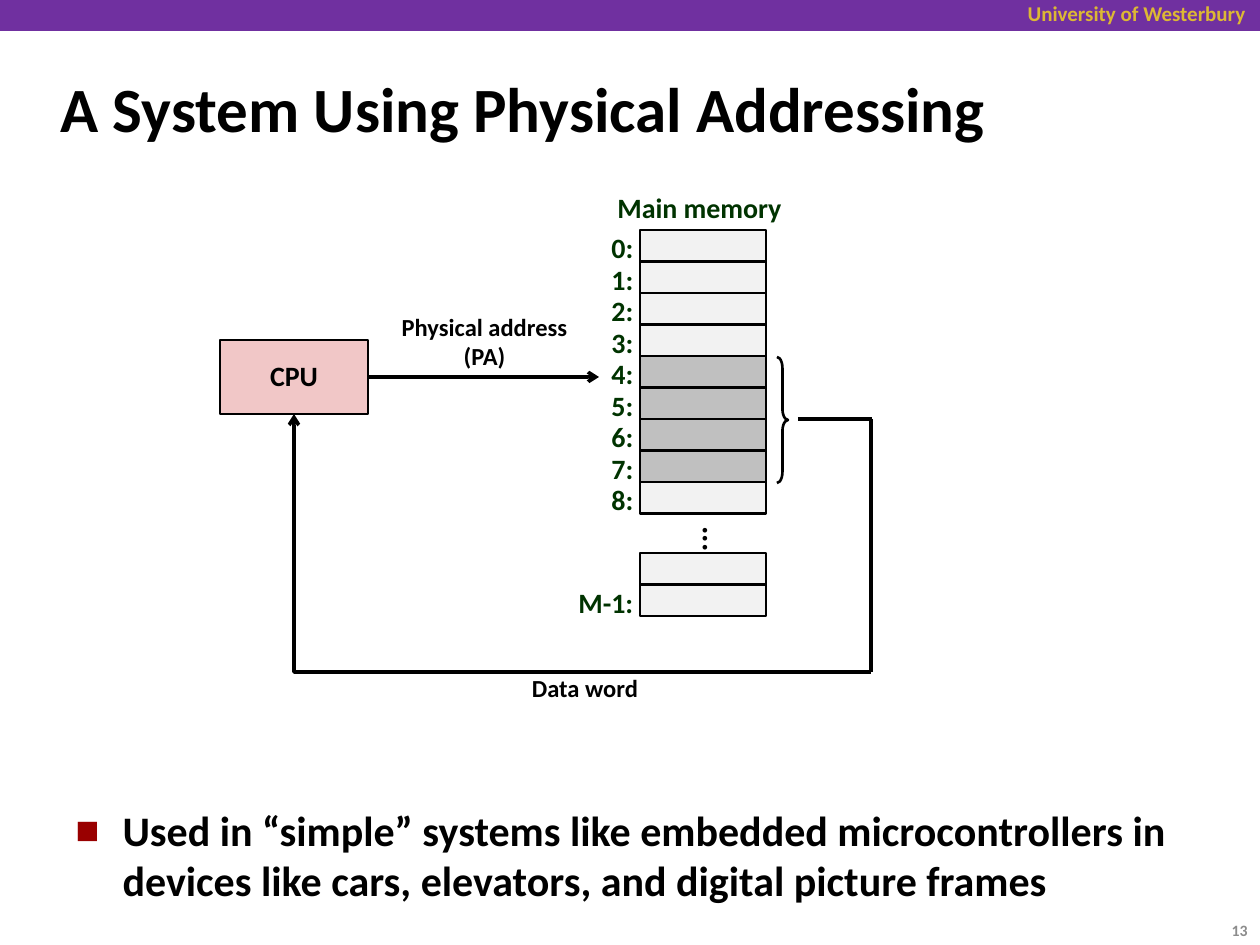
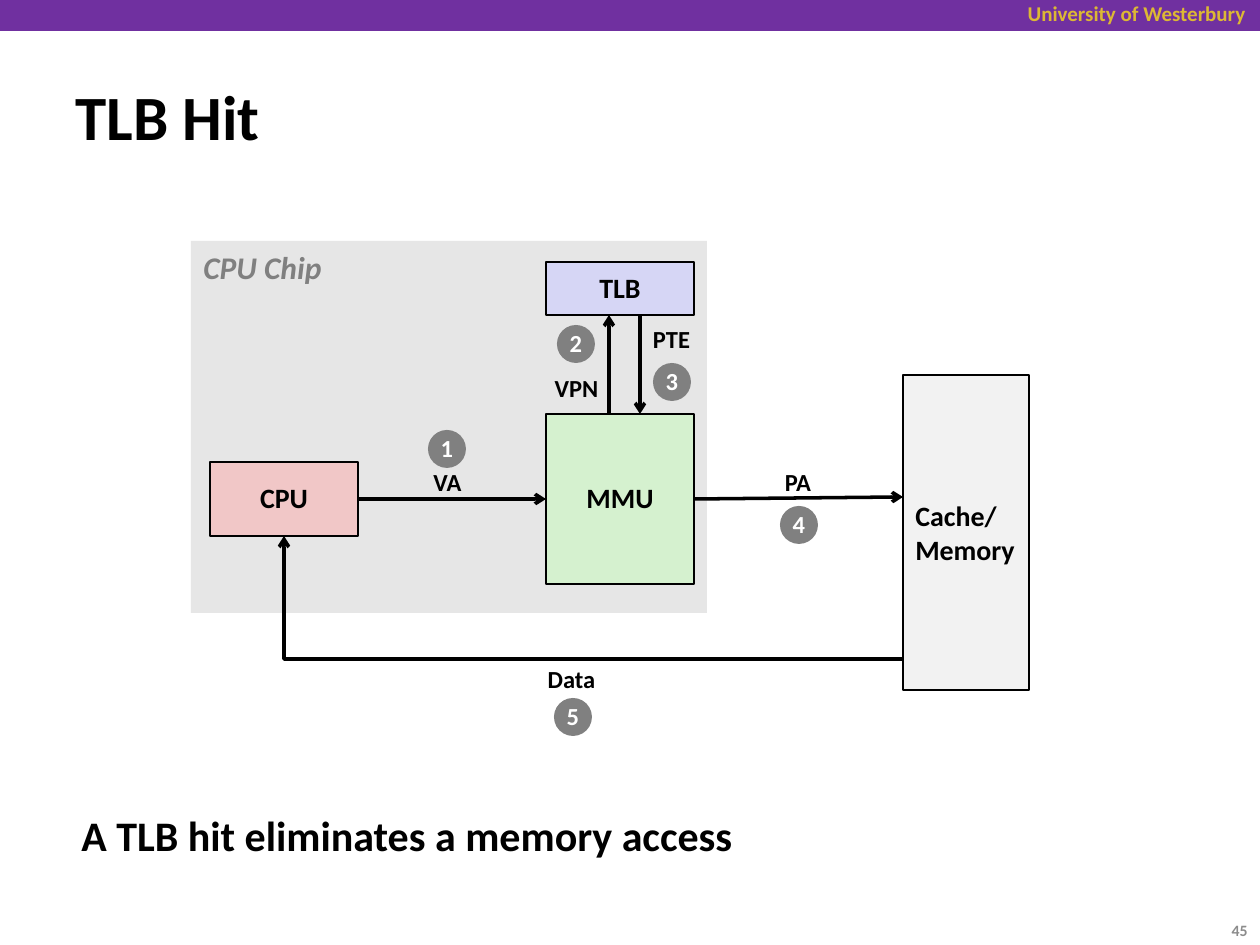
import pptx
import pptx.util
import pptx.dml.color
import pptx.enum.shapes
import pptx.enum.text
import pptx.oxml.ns
import lxml.etree

SHAPE = pptx.enum.shapes.MSO_SHAPE
CONNECTOR = pptx.enum.shapes.MSO_CONNECTOR
ALIGN = pptx.enum.text.PP_ALIGN
ANCHOR = pptx.enum.text.MSO_ANCHOR
FIT = pptx.enum.text.MSO_AUTO_SIZE
qn = pptx.oxml.ns.qn

FONT = "Calibri"
COLORS = {
    "band": "7030A0", "school": "DCB834", "ink": "000000", "white": "FFFFFF",
    "bullet": "990000", "memory_text": "003300", "cell": "F2F2F2", "word": "C0C0C0",
    "cpu": "F1C7C7", "mmu": "D5F1CF", "tlb": "D6D6F5", "chip": "E6E6E6",
    "gray": "808080", "page": "8C8C8C",
}
SCHOOL = "University of Westerbury"
PHYSICAL = {
    "title": "A System Using Physical Addressing",
    "note": "Used in “simple” systems like embedded microcontrollers in devices like cars, elevators, and digital picture frames",
    "page": "13",
}
HIT = {"title": "TLB Hit", "note": "A TLB hit eliminates a memory access", "page": "45"}

CELL_LEFT, CELL_WIDTH, TWO_CELLS = 640, 126, 63
LABEL_RIGHT = 646
MEMORY_BLOCKS = [
    (230, [f"{address}:" for address in range(9)]),
    (553, ["", "M-1:"]),
]
WORD_CELLS = {"4:", "5:", "6:", "7:"}
LABEL_WIDTHS = {"M-1:": 80}

HIT_BOXES = {
    "CPU": ("cpu", (210, 462, 148, 74)),
    "MMU": ("mmu", (546, 414, 148, 170)),
    "TLB": ("tlb", (546, 262, 148, 53)),
}
HIT_LABELS = [
    ("VA", (421, 462, 53, 42)),
    ("VPN", (542, 368, 69, 42)),
    ("PTE", (640, 319, 63, 42)),
    ("PA", (772, 462, 52, 42)),
    ("Data", (535, 659, 73, 42)),
]
STEP_SIZE = 38
STEPS = [(428, 430), (557, 325), (653, 363), (780, 506), (554, 698)]


def px(length):
    return round(length * 914400 / 126)


def place(shape, box):
    shape.left, shape.top, shape.width, shape.height = map(px, box)


def rgb(name):
    return pptx.dml.color.RGBColor.from_string(COLORS[name])


def write(shape, text, size=14, color="ink", bold=True, italic=False, align=ALIGN.CENTER,
          anchor=ANCHOR.MIDDLE, spacing=0.98, before=0, wrap=False, fit=FIT.NONE):
    frame = shape.text_frame
    frame.word_wrap, frame.auto_size, frame.vertical_anchor = wrap, fit, anchor
    frame.text = text
    for paragraph in frame.paragraphs:
        paragraph.alignment = align
        paragraph.line_spacing = spacing
        paragraph.space_before = pptx.util.Pt(before)
        for run in paragraph.runs:
            font = run.font
            font.name, font.size, font.bold, font.italic = FONT, pptx.util.Pt(size), bold, italic
            font.color.rgb = rgb(color)
    return shape


def add_text(slide, text, box, **style):
    return write(slide.shapes.add_textbox(*map(px, box)), text, **style)


def add_label(slide, text, box, **style):
    return add_text(slide, text, box, fit=FIT.SHAPE_TO_FIT_TEXT, **style)


def add_box(slide, box, fill=None, line=0, kind=SHAPE.RECTANGLE):
    shape = slide.shapes.add_shape(kind, *map(px, box))
    shape.shadow.inherit = False
    if fill:
        shape.fill.solid()
        shape.fill.fore_color.rgb = rgb(fill)
    else:
        shape.fill.background()
    if line:
        shape.line.color.rgb = rgb("ink")
        shape.line.width = pptx.util.Pt(line)
    else:
        shape.line.fill.background()
    return shape


def add_line(slide, start, end, arrow=True, kind=CONNECTOR.STRAIGHT, begin_at=None, end_at=None):
    line = slide.shapes.add_connector(kind, *map(px, start + end))
    if begin_at:
        line.begin_connect(*begin_at)
    if end_at:
        line.end_connect(*end_at)
    line.line.color.rgb = rgb("ink")
    line.line.width = pptx.util.Pt(2)
    properties = line.element.spPr
    if arrow:
        lxml.etree.SubElement(properties.find(qn("a:ln")), qn("a:tailEnd"), type="arrow")
    lxml.etree.SubElement(properties, qn("a:effectLst"))
    return line


def add_return_path(slide, start, end, cpu):
    path = add_line(slide, start, end, kind=CONNECTOR.ELBOW, end_at=(cpu, 2))
    properties = path.element.spPr
    properties.find(qn("a:prstGeom")).set("prst", "bentConnector2")
    turn = properties.find(qn("a:xfrm"))
    for flip in ("flipH", "flipV"):
        turn.attrib.pop(flip, None)
    turn.set("rot", "10800000")


def add_bullet(paragraph):
    properties = paragraph._p.get_or_add_pPr()
    properties.set("marL", str(px(47)))
    properties.set("indent", str(-px(47)))
    color = lxml.etree.SubElement(properties, qn("a:buClr"))
    lxml.etree.SubElement(color, qn("a:srgbClr"), val=COLORS["bullet"])
    lxml.etree.SubElement(properties, qn("a:buSzPct"), val="60000")
    lxml.etree.SubElement(properties, qn("a:buFont"), typeface=FONT)
    lxml.etree.SubElement(properties, qn("a:buChar"), char="■")


def start_slide(deck, layout, content, title_box):
    slide = deck.slides.add_slide(deck.slide_layouts[layout])
    place(slide.shapes.title, title_box)
    write(slide.shapes.title, content["title"], size=36, align=ALIGN.LEFT, spacing=1.0, wrap=True)
    add_text(slide, content["page"], (1176, 905, 84, 50), size=9, color="page",
             align=ALIGN.RIGHT, spacing=1.0, wrap=True)
    return slide


def move_band_to_master(deck, slide):
    band = add_box(slide, (0, 0, 1260, 31), fill="band")
    school = add_text(slide, SCHOOL, (924, -6, 334, 38), size=12, color="school",
                      align=ALIGN.RIGHT, anchor=ANCHOR.TOP, spacing=1.0, wrap=True)
    for part in (band, school):
        deck.slide_master.element.cSld.spTree.append(part.element)


def add_memory(slide):
    style = dict(size=16, color="memory_text", anchor=ANCHOR.TOP, spacing=0.88, before=6)
    add_label(slide, "Main memory", (604, 189, 191, 42), **style)
    for top, addresses in MEMORY_BLOCKS:
        for row, address in enumerate(addresses):
            y = top + row * TWO_CELLS / 2
            fill = "word" if address in WORD_CELLS else "cell"
            add_box(slide, (CELL_LEFT, y, CELL_WIDTH, TWO_CELLS / 2), fill=fill, line=1.5)
            if address:
                width = LABEL_WIDTHS.get(address, 47)
                add_label(slide, address, (LABEL_RIGHT - width, y - 1, width, 42),
                          align=ALIGN.LEFT, **style)
    dots = add_text(slide, "...", (651, 514, 126, 32), size=18)
    dots.element.txBody.bodyPr.set("vert", "eaVert")


def build_physical(deck):
    slide = start_slide(deck, 1, PHYSICAL, (48, 53, 1201, 108))
    move_band_to_master(deck, slide)
    note = slide.placeholders[1]
    place(note, (63, 798, 1145, 121))
    write(note, PHYSICAL["note"], size=24, align=ALIGN.LEFT, anchor=ANCHOR.TOP,
          spacing=1.0, before=5, wrap=True)
    add_bullet(note.text_frame.paragraphs[0])

    add_memory(slide)
    cpu = write(add_box(slide, (220, 340, 148, 74), fill="cpu", line=1), "CPU", size=16)
    add_label(slide, "Physical address\n(PA)", (388, 306, 193, 72))
    add_label(slide, "Data word", (519, 668, 132, 42))
    brace = add_box(slide, (777, 357, 11, 126), line=1.5, kind=SHAPE.RIGHT_BRACE)
    brace.adjustments[0], brace.adjustments[1] = 1, 0.5
    add_line(slide, (368, 377), (599, 377), begin_at=(cpu, 3))
    add_line(slide, (798, 419), (872, 419), arrow=False)
    add_line(slide, (871, 419), (871, 672), arrow=False)
    add_return_path(slide, (871, 672), (294, 414), cpu)


def build_hit(deck):
    slide = start_slide(deck, 5, HIT, (63, 61, 1201, 108))
    add_box(slide, (191, 241, 516, 372), fill="chip")
    add_label(slide, "CPU Chip", (191, 242, 146, 50), size=18, color="gray", italic=True,
              align=ALIGN.LEFT, anchor=ANCHOR.TOP, spacing=1.0)
    boxes = {name: write(add_box(slide, box, fill=fill, line=1), name, size=16)
             for name, (fill, box) in HIT_BOXES.items()}
    write(add_box(slide, (903, 375, 126, 315), fill="cell", line=1.5), "Cache/\nMemory",
          size=16, align=ALIGN.LEFT, spacing=1.0)

    add_line(slide, (358, 499), (546, 499), begin_at=(boxes["CPU"], 3), end_at=(boxes["MMU"], 1))
    add_line(slide, (694, 499), (903, 497), begin_at=(boxes["MMU"], 3))
    add_line(slide, (609, 414), (609, 315))
    add_line(slide, (640, 315), (640, 414))
    add_return_path(slide, (903, 659), (284, 536), boxes["CPU"])

    for text, box in HIT_LABELS:
        add_label(slide, text, box)
    for number, corner in enumerate(STEPS, 1):
        step = add_box(slide, corner + (STEP_SIZE, STEP_SIZE), fill="gray", kind=SHAPE.OVAL)
        write(step, str(number), color="white")
    add_text(slide, HIT["note"], (69, 803, 990, 79), size=24, align=ALIGN.LEFT,
             anchor=ANCHOR.TOP, spacing=1.0, before=5, wrap=True)


def main():
    deck = pptx.Presentation()
    deck.slide_width, deck.slide_height = px(1260), px(945)
    build_physical(deck)
    build_hit(deck)
    deck.save("out.pptx")


if __name__ == "__main__":
    main()
